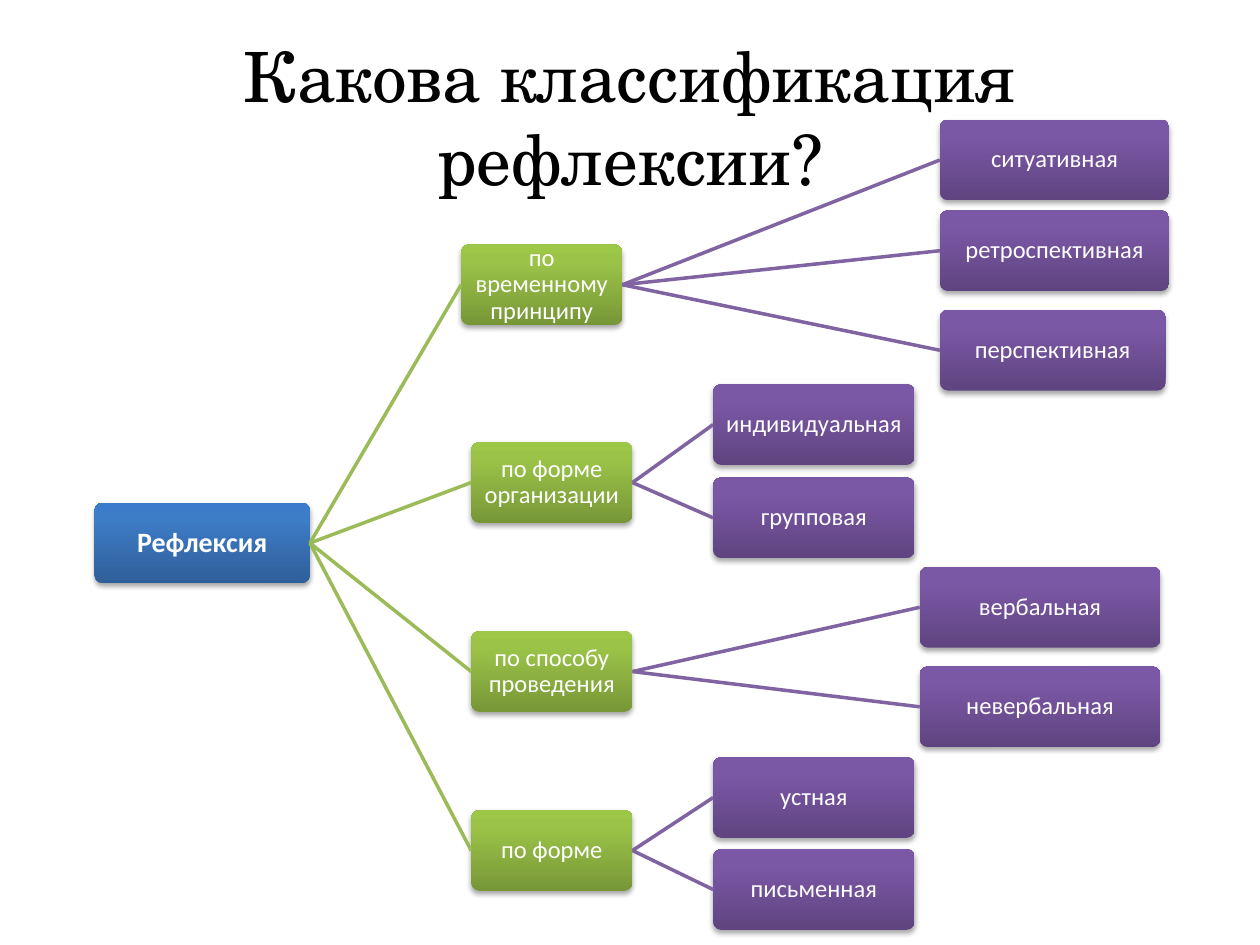
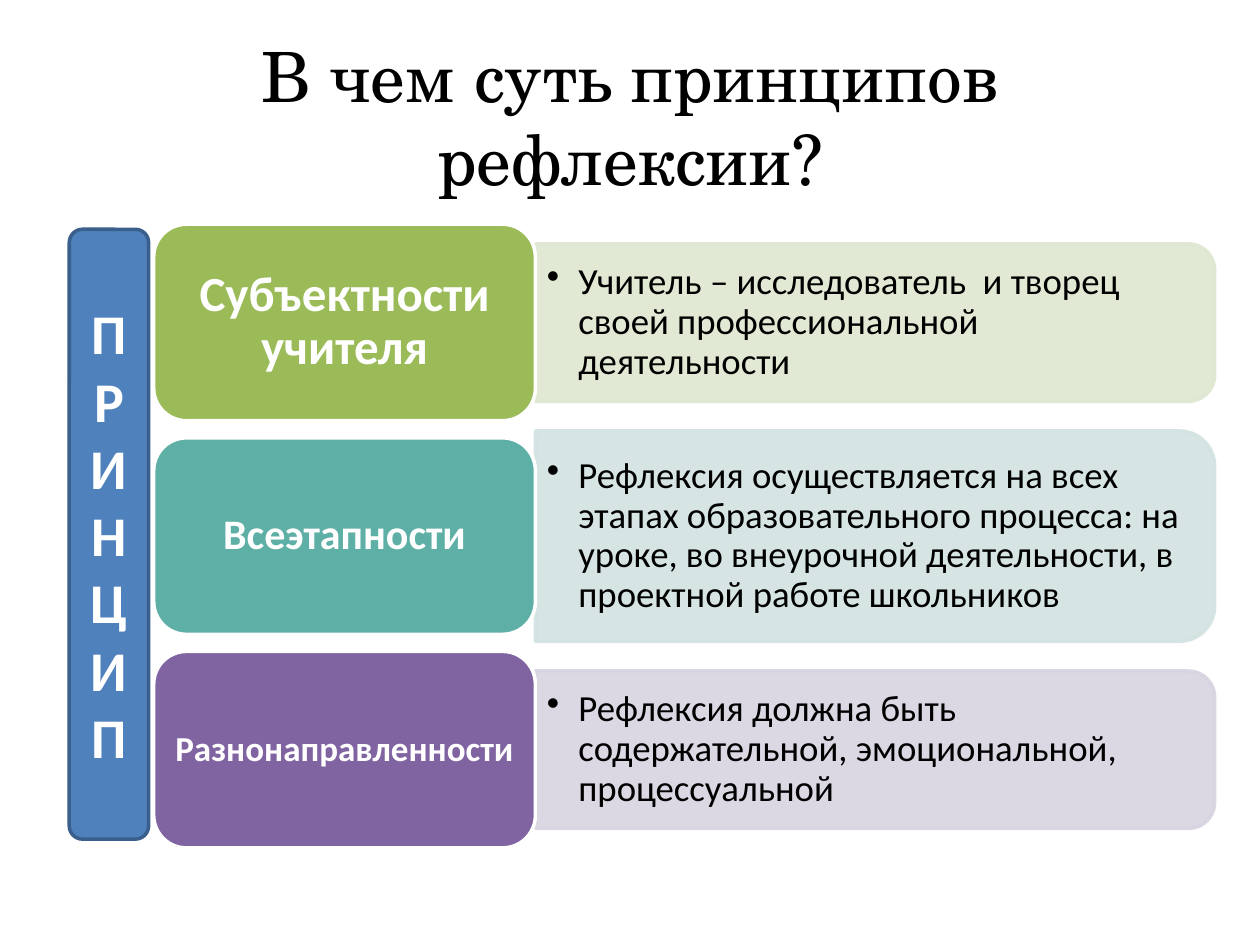
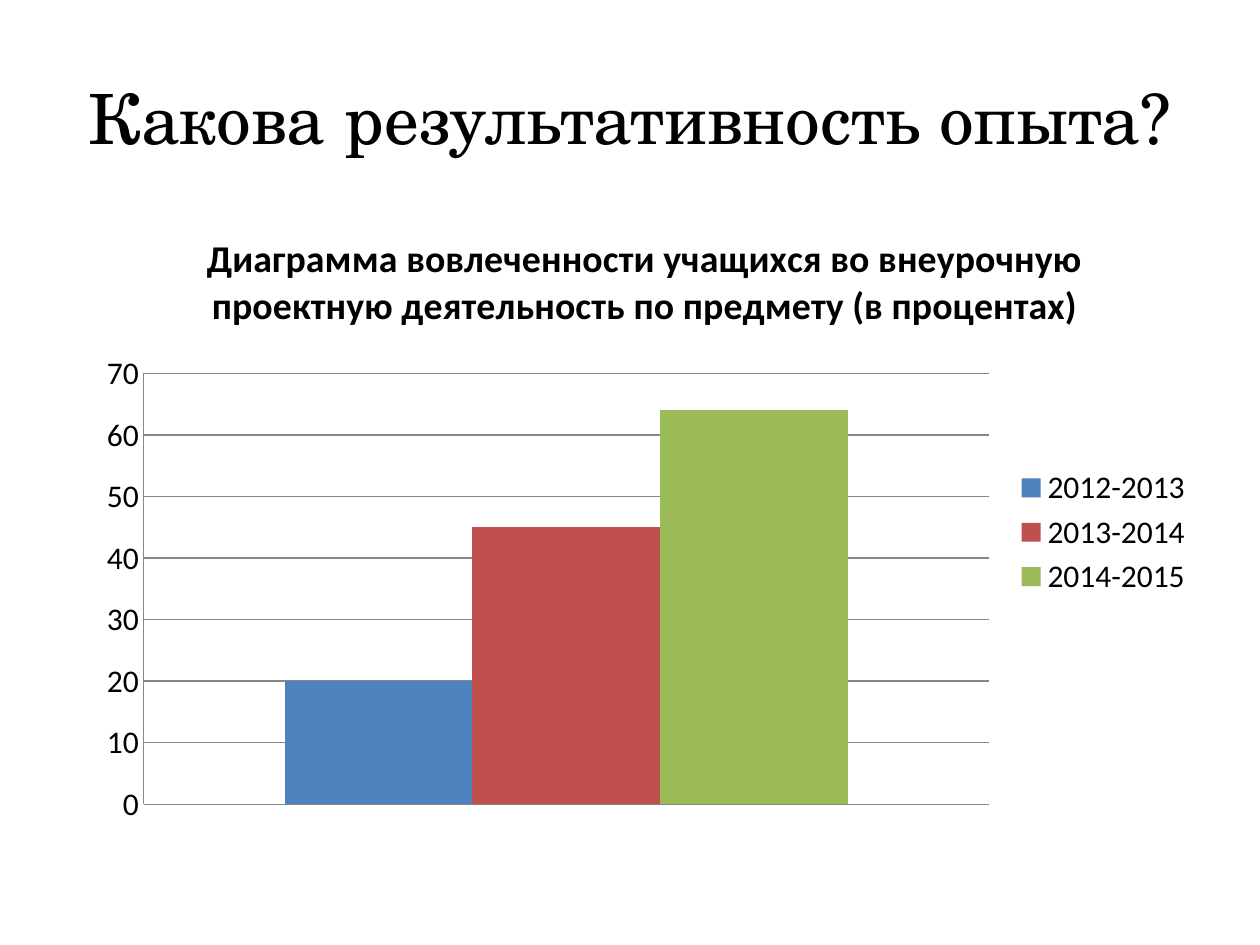
from copy import deepcopy
from dataclasses import dataclass

from lxml.etree import SubElement
from pptx import Presentation
from pptx.chart.data import CategoryChartData
from pptx.dml.color import RGBColor
from pptx.enum.chart import XL_CHART_TYPE as ChartType
from pptx.enum.chart import XL_LEGEND_POSITION as LegendPosition
from pptx.enum.chart import XL_TICK_MARK as TickMark
from pptx.enum.shapes import MSO_CONNECTOR as ConnectorKind
from pptx.enum.shapes import MSO_SHAPE as Preset
from pptx.enum.text import MSO_ANCHOR as Anchor
from pptx.enum.text import MSO_AUTO_SIZE as AutoSize
from pptx.enum.text import PP_ALIGN as Align
from pptx.oxml.ns import qn
from pptx.util import Inches, Pt

# Shared style
BODY_FONT = "Calibri"
TITLE_FONT = "TeX Gyre Schola"
BLACK, WHITE, GRAY = "000000", "FFFFFF", "878787"
BLUE, RED, GREEN, PURPLE, TEAL = "4F81BD", "C0504D", "9BBB59", "8064A2", "5EAFA6"

# Grid: 100 columns by 75 rows
SLIDE_WIDTH, SLIDE_HEIGHT = Inches(10), Inches(7.5)
COLUMNS, ROWS = 100, 75
NODE_HEIGHT = 6.4


@dataclass(frozen=True)
class Level:
    """Look of one level of the tree: gradient from bottom to top."""
    gradient: tuple[str, str, str]
    link: str
    size: int
    bold: bool = False


@dataclass(frozen=True)
class Node:
    text: str
    left: float
    top: float
    width: float
    children: tuple["Node", ...] = ()


@dataclass(frozen=True)
class Principle:
    name: str
    detail: str
    color: str
    tint: str
    name_size: int
    detail_height: float


LEVELS = (
    Level(("2F5F99", "3D7CC7", "3A7CCB"), BLUE, 16, bold=True),
    Level(("779737", "9BC348", "9DC746"), GREEN, 14),
    Level(("5F4480", "7B58A6", "7C57A8"), PURPLE, 14),
)

REFLECTION = Node("Рефлексия", 7.5, 39.9, 17.1, (
    Node("по временному принципу", 36.6, 19.4, 12.8, (
        Node("ситуативная", 74.6, 9.5, 18.2),
        Node("ретроспективная", 74.6, 16.7, 18.2),
        Node("перспективная", 74.6, 24.6, 17.9),
    )),
    Node("по форме организации", 37.4, 35.1, 12.8, (
        Node("индивидуальная", 56.6, 30.5, 16),
        Node("групповая", 56.6, 37.9, 16),
    )),
    Node("по способу проведения", 37.4, 50.1, 12.8, (
        Node("вербальная", 73, 45, 19.1),
        Node("невербальная", 73, 52.9, 19.1),
    )),
    Node("по форме", 37.4, 64.3, 12.8, (
        Node("устная", 56.6, 60.1, 16),
        Node("письменная", 56.6, 67.4, 16),
    )),
))

PRINCIPLES = (
    Principle("Субъектности учителя",
              "Учитель – исследователь  и творец своей профессиональной деятельности",
              GREEN, "DEE7D1", 28, 12.5),
    Principle("Всеэтапности",
              "Рефлексия осуществляется на всех этапах образовательного процесса: "
              "на уроке, во внеурочной деятельности, в проектной работе школьников",
              TEAL, "D2E3E2", 24, 16.7),
    Principle("Разнонаправленности",
              "Рефлексия должна быть содержательной, эмоциональной, процессуальной",
              PURPLE, "D8D3E0", 20, 12.5),
)

INVOLVEMENT = (("2012-2013", 20, BLUE), ("2013-2014", 45, RED), ("2014-2015", 64, GREEN))


# Helpers
def rgb(color: str) -> RGBColor:
    return RGBColor.from_string(color)


def place(left: float, top: float, width: float, height: float) -> tuple[int, ...]:
    """Turn columns and rows into slide lengths."""
    column, row = SLIDE_WIDTH / COLUMNS, SLIDE_HEIGHT / ROWS
    return (round(left * column), round(top * row),
            round(width * column), round(height * row))


def write(frame, text: str, *, size: float, color: str = WHITE, font: str = BODY_FONT,
          bold: bool = False, align=Align.CENTER, spacing: float | None = None,
          bullet: bool = False) -> None:
    frame.text = text
    for paragraph in frame.paragraphs:
        if bullet:
            props = paragraph._p.get_or_add_pPr()
            props.set("marL", str(Inches(0.25)))
            props.set("indent", str(-Inches(0.25)))
            SubElement(props, qn("a:buChar"), char="•")
        paragraph.alignment = align
        if spacing:
            paragraph.line_spacing = spacing
        for run in paragraph.runs:
            run.font.name, run.font.size, run.font.bold = font, Pt(size), bold
            run.font.color.rgb = rgb(color)


def fit(frame, side: float = 0.1, end: float = 0.05) -> None:
    """Wrap and centre the text vertically, with margins in inches."""
    frame.word_wrap = True
    frame.auto_size = AutoSize.NONE
    frame.vertical_anchor = Anchor.MIDDLE
    frame.margin_left = frame.margin_right = Inches(side)
    frame.margin_top = frame.margin_bottom = Inches(end)


def add_block(slide, preset, box: tuple[int, ...], fill: str, line: str):
    block = slide.shapes.add_shape(preset, *box)
    block.shadow.inherit = False
    block.fill.solid()
    block.fill.fore_color.rgb = rgb(fill)
    block.line.color.rgb = rgb(line)
    block.line.width = Pt(2)
    return block


def add_titled_slide(deck, title: str):
    slide = deck.slides.add_slide(deck.slide_layouts.get_by_name("Title Only"))
    heading = slide.shapes.title
    heading.left, heading.top, heading.width, heading.height = place(5, 3, 90, 12.5)
    fit(heading.text_frame)
    write(heading.text_frame, title, size=39.6, color=BLACK, font=TITLE_FONT)
    return slide


# Slide 1: classification tree
def shade(block, colors: tuple[str, str, str]) -> None:
    """Give a block a three-stop upward gradient and a soft shadow."""
    block.fill.gradient()
    block.fill.gradient_angle = 90
    stops = block.element.spPr.find(qn("a:gradFill")).find(qn("a:gsLst"))
    stops.insert(1, deepcopy(stops[0]))
    for stop, position, color in zip(block.fill.gradient_stops, (0, 0.8, 1), colors):
        stop.position = position
        stop.color.rgb = rgb(color)
    block.line.fill.background()
    effects = block.element.spPr.find(qn("a:effectLst"))
    shadow = SubElement(effects, qn("a:outerShdw"), blurRad=str(Pt(3.1)),
                        dist=str(Pt(1.8)), dir="5400000", rotWithShape="0")
    shadow_color = SubElement(shadow, qn("a:srgbClr"), val=BLACK)
    SubElement(shadow_color, qn("a:alpha"), val="35000")


def link(slide, parent, child, color: str) -> None:
    connector = slide.shapes.add_connector(ConnectorKind.STRAIGHT, 0, 0, 0, 0)
    connector.begin_connect(parent, 3)
    connector.end_connect(child, 1)
    connector.line.color.rgb = rgb(color)
    connector.line.width = Pt(2)
    SubElement(connector.element.spPr, qn("a:effectLst"))


def draw_tree(slide, node: Node, depth: int = 0):
    level = LEVELS[depth]
    box = place(node.left, node.top, node.width, NODE_HEIGHT)
    block = add_block(slide, Preset.ROUNDED_RECTANGLE, box, level.link, level.link)
    block.adjustments[0] = 0.1
    shade(block, level.gradient)
    fit(block.text_frame, 0.01, 0.01)
    write(block.text_frame, node.text, size=level.size, bold=level.bold, spacing=0.9)
    for child in node.children:
        link(slide, block, draw_tree(slide, child, depth + 1), LEVELS[depth + 1].link)
    return block


def add_classification(deck) -> None:
    slide = add_titled_slide(deck, "Какова классификация рефлексии?")
    draw_tree(slide, REFLECTION)


# Slide 2: principles
def draw_principle(slide, principle: Principle, top: float) -> None:
    card_left, card_width, card_height = 12.2, 30.3, 15.6
    detail_left, detail_width = card_left + card_width, 53.9
    height = principle.detail_height
    middle = top + card_height / 2

    # The panel is turned a quarter so that its round corners face right
    box = place(detail_left + (detail_width - height) / 2, middle - detail_width / 2,
                height, detail_width)
    panel = add_block(slide, Preset.ROUND_2_SAME_RECTANGLE, box,
                      principle.tint, principle.tint)
    panel.rotation = 90
    for tint in panel.element.spPr.iter(qn("a:srgbClr")):
        SubElement(tint, qn("a:alpha"), val="90000")

    detail = slide.shapes.add_textbox(
        *place(detail_left, middle - height / 2, detail_width - 0.7, height))
    fit(detail.text_frame, 0.09, 0.04)
    write(detail.text_frame, principle.detail, size=21, color=BLACK,
          align=Align.LEFT, spacing=0.9, bullet=True)

    card = add_block(slide, Preset.ROUNDED_RECTANGLE,
                     place(card_left, top, card_width, card_height),
                     principle.color, WHITE)
    fit(card.text_frame, 0.08, 0.04)
    write(card.text_frame, principle.name, size=principle.name_size,
          bold=True, spacing=0.9)


def add_principles(deck) -> None:
    slide = add_titled_slide(deck, "В чем суть принципов рефлексии?")
    for index, principle in enumerate(PRINCIPLES):
        draw_principle(slide, principle, top=17.8 + 16.95 * index)
    spine = add_block(slide, Preset.ROUNDED_RECTANGLE, place(5.5, 18.2, 6.3, 48.4),
                      BLUE, "3A5F8C")
    fit(spine.text_frame)
    write(spine.text_frame, "\n".join("ПРИНЦИП"), size=32, bold=True)


# Slide 3: results chart
def add_results(deck) -> None:
    slide = add_titled_slide(deck, "Какова результативность опыта?")
    data = CategoryChartData()
    data.categories = [" "]
    for year, percent, _ in INVOLVEMENT:
        data.add_series(year, [percent])
    chart = slide.shapes.add_chart(
        ChartType.COLUMN_CLUSTERED, *place(6.7, 16.2, 89, 52.1), data).chart
    chart.font.name, chart.font.size = BODY_FONT, Pt(18)
    chart.font.color.rgb = rgb(BLACK)

    chart.has_title = True
    write(chart.chart_title.text_frame,
          "Диаграмма вовлеченности учащихся во внеурочную проектную деятельность "
          "по предмету (в процентах)", size=21.6, color=BLACK, bold=True)
    chart.chart_title.include_in_layout = False
    chart.has_legend = True
    chart.legend.position = LegendPosition.RIGHT
    chart.legend.include_in_layout = False

    plot = chart.plots[0]
    plot.gap_width, plot.overlap, plot.vary_by_categories = 150, 0, False
    for series, (_, _, color) in zip(plot.series, INVOLVEMENT):
        series.format.fill.solid()
        series.format.fill.fore_color.rgb = rgb(color)

    scale = chart.value_axis
    scale.minimum_scale, scale.maximum_scale, scale.major_unit = 0, 70, 10
    scale.has_major_gridlines = True
    for axis in (chart.category_axis, scale):
        axis.major_tick_mark = axis.minor_tick_mark = TickMark.NONE
    for ruled in (chart.category_axis, scale, scale.major_gridlines):
        ruled.format.line.color.rgb = rgb(GRAY)
        ruled.format.line.width = Pt(0.75)


def main() -> None:
    deck = Presentation()
    deck.slide_width, deck.slide_height = SLIDE_WIDTH, SLIDE_HEIGHT
    add_classification(deck)
    add_principles(deck)
    add_results(deck)
    deck.save("out.pptx")


if __name__ == "__main__":
    main()
